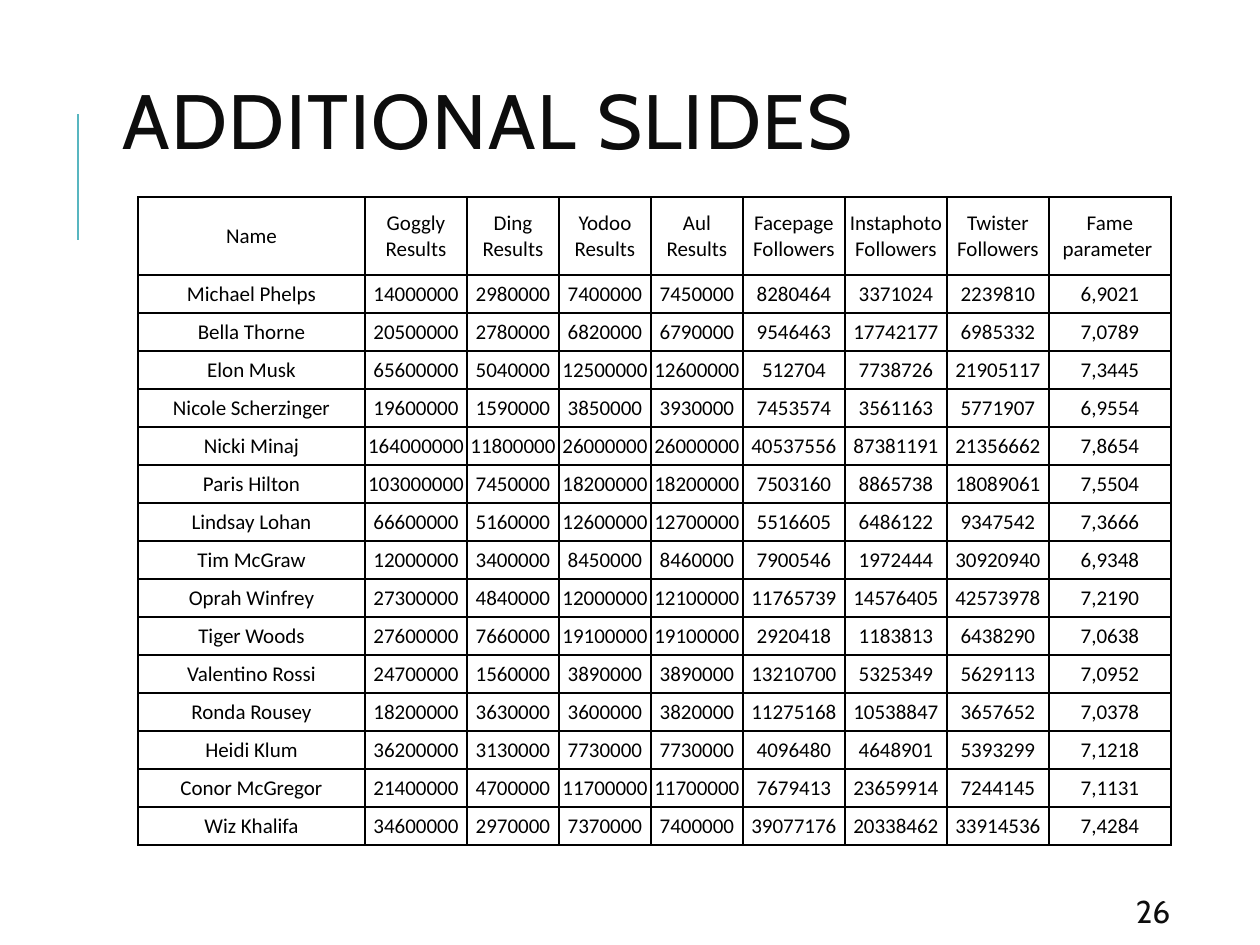
from lxml import etree
from pptx import Presentation
from pptx import util as u
from pptx.dml.color import RGBColor
from pptx.enum import shapes, text
from pptx.oxml import ns

SCALE = 914400 / 126
COLORS = {"title": "0D0D0D", "accent": "58B6C0", "grid": "000000"}
COLUMN_WIDTHS = [227, 102, 92, 92, 92, 102, 102, 102, 122]
HEADER_HEIGHT, ROW_HEIGHT = 78, 38
HEADERS = ["Name", "Goggly Results", "Ding Results", "Yodoo Results", "Aul Results",
           "Facepage Followers", "Instaphoto Followers", "Twister Followers", "Fame parameter "]
PEOPLE = [
    ("Michael Phelps", "14000000 2980000 7400000 7450000 8280464 3371024 2239810 6,9021"),
    ("Bella Thorne", "20500000 2780000 6820000 6790000 9546463 17742177 6985332 7,0789"),
    ("Elon Musk", "65600000 5040000 12500000 12600000 512704 7738726 21905117 7,3445"),
    ("Nicole Scherzinger", "19600000 1590000 3850000 3930000 7453574 3561163 5771907 6,9554"),
    ("Nicki Minaj", "164000000 11800000 26000000 26000000 40537556 87381191 21356662 7,8654"),
    ("Paris Hilton", "103000000 7450000 18200000 18200000 7503160 8865738 18089061 7,5504"),
    ("Lindsay Lohan", "66600000 5160000 12600000 12700000 5516605 6486122 9347542 7,3666"),
    ("Tim McGraw", "12000000 3400000 8450000 8460000 7900546 1972444 30920940 6,9348"),
    ("Oprah Winfrey", "27300000 4840000 12000000 12100000 11765739 14576405 42573978 7,2190"),
    ("Tiger Woods", "27600000 7660000 19100000 19100000 2920418 1183813 6438290 7,0638"),
    ("Valentino Rossi", "24700000 1560000 3890000 3890000 13210700 5325349 5629113 7,0952"),
    ("Ronda Rousey", "18200000 3630000 3600000 3820000 11275168 10538847 3657652 7,0378"),
    ("Heidi Klum", "36200000 3130000 7730000 7730000 4096480 4648901 5393299 7,1218"),
    ("Conor McGregor", "21400000 4700000 11700000 11700000 7679413 23659914 7244145 7,1131"),
    ("Wiz Khalifa", "34600000 2970000 7370000 7400000 39077176 20338462 33914536 7,4284"),
]


def px(n):
    return u.Emu(round(n * SCALE))


def rgb(name):
    return RGBColor.from_string(COLORS[name])


def style(p, font, size, color):
    p.font.name = font
    p.font.size = u.Pt(size)
    p.font.color.rgb = rgb(color)


def place(sp, x, y, w, h):
    sp.left, sp.top, sp.width, sp.height = px(x), px(y), px(w), px(h)


def fill_frame(sp, words, size, anchor):
    tf = sp.text_frame
    tf.word_wrap = True
    tf.auto_size = text.MSO_AUTO_SIZE.NONE
    tf.vertical_anchor = anchor
    tf.margin_left = tf.margin_right = px(16)
    tf.margin_top = tf.margin_bottom = px(9)
    p = tf.paragraphs[0]
    p.text = words
    p.alignment = text.PP_ALIGN.LEFT
    style(p, "Cabin", size, "title")
    return p


def add_title(s, words):
    sp = s.shapes.title
    place(sp, 106, 81, 1004, 207)
    p = fill_frame(sp, words, 44, text.MSO_ANCHOR.TOP)
    p.line_spacing = 0.8
    p.runs[0].font._element.set("spc", "100")


def add_accent_line(s):
    line = s.shapes.add_connector(shapes.MSO_CONNECTOR.STRAIGHT, px(78), px(240), px(78), px(114))
    line.line.color.rgb = rgb("accent")
    line.line.width = u.Pt(1.5)
    etree.SubElement(line._element.spPr, ns.qn("a:effectLst"))


def add_page_number(s, number):
    sp = s.shapes.add_textbox(px(1120), px(892), px(101), px(38))
    fill_frame(sp, number, 18, text.MSO_ANCHOR.MIDDLE)


def add_borders(cell):
    tc_pr = cell._tc.get_or_add_tcPr()
    for side in ("lnL", "lnR", "lnT", "lnB"):
        ln = etree.SubElement(tc_pr, ns.qn(f"a:{side}"), w=str(u.Pt(1)))
        fill = etree.SubElement(ln, ns.qn("a:solidFill"))
        etree.SubElement(fill, ns.qn("a:srgbClr"), val=COLORS["grid"])


def fill_cell(cell, words):
    add_borders(cell)
    cell.fill.background()
    cell.vertical_anchor = text.MSO_ANCHOR.MIDDLE
    cell.margin_left = cell.margin_right = cell.margin_top = px(1)
    cell.margin_bottom = 0
    p = cell.text_frame.paragraphs[0]
    p.text = words
    p.alignment = text.PP_ALIGN.CENTER
    style(p, "Calibri", 12, "grid")


def add_fame_table(s):
    rows = [HEADERS] + [[name, *values.split()] for name, values in PEOPLE]
    heights = [HEADER_HEIGHT] + [ROW_HEIGHT] * len(PEOPLE)
    table = s.shapes.add_table(len(rows), len(HEADERS), px(138), px(197),
                               px(sum(COLUMN_WIDTHS)), px(sum(heights))).table
    table.first_row = table.horz_banding = False
    for column, width in zip(table.columns, COLUMN_WIDTHS):
        column.width = px(width)
    for row, height, values in zip(table.rows, heights, rows):
        row.height = px(height)
        for cell, value in zip(row.cells, values):
            fill_cell(cell, value)


def main():
    prs = Presentation()
    prs.slide_width, prs.slide_height = px(1260), px(945)
    s = prs.slides.add_slide(prs.slide_layouts[5])
    add_accent_line(s)
    add_title(s, "ADDITIONAL SLIDES")
    add_page_number(s, "26")
    add_fame_table(s)
    prs.save("out.pptx")


if __name__ == "__main__":
    main()
